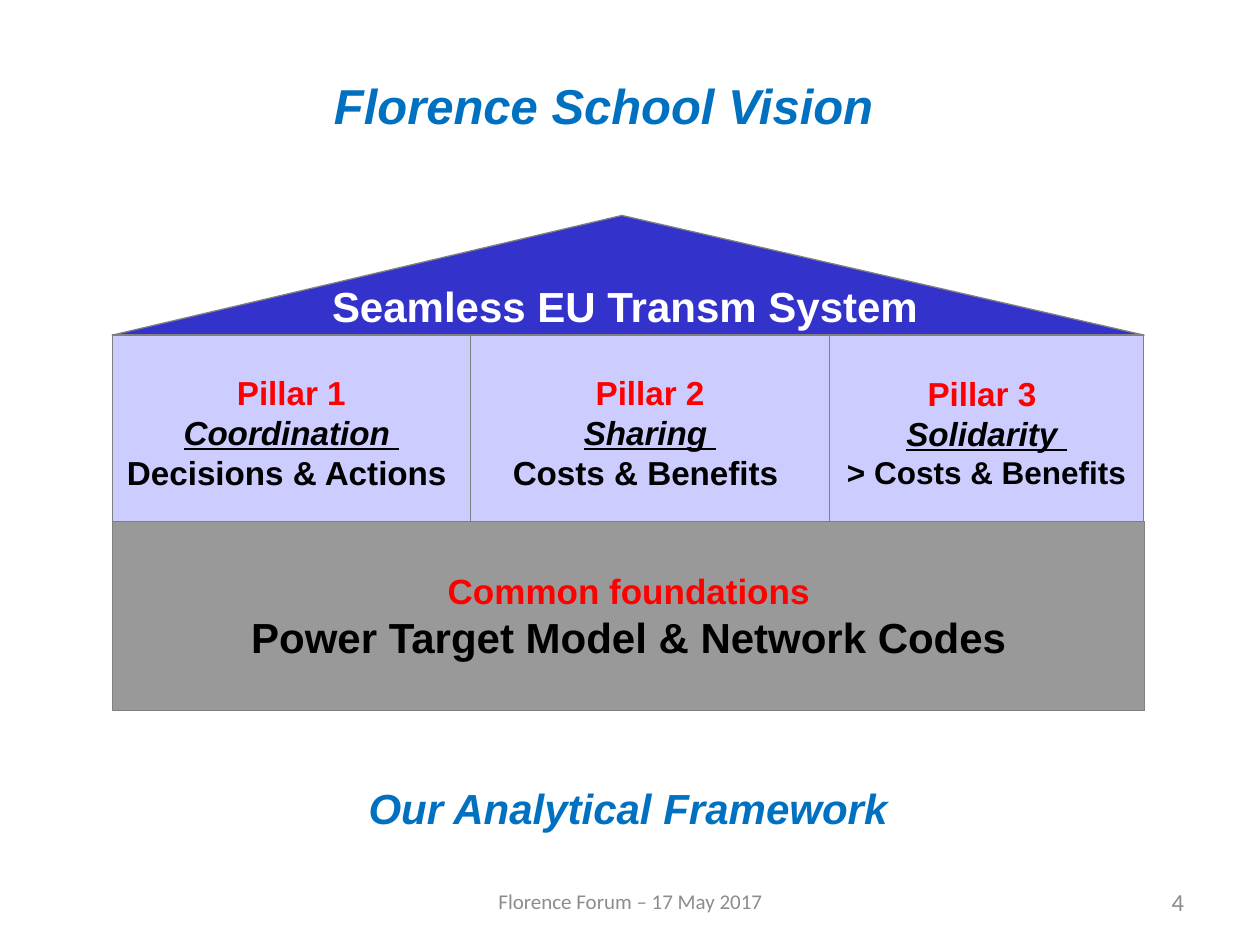
from pptx import Presentation
from pptx.dml.color import RGBColor
from pptx.enum.shapes import MSO_SHAPE as Shape
from pptx.enum.text import MSO_ANCHOR as Anchor, PP_ALIGN as Align
from pptx.util import Pt

COLORS = {
    "roof": "3333CC",
    "pillar": "CCCCFF",
    "foundation": "999999",
    "outline": "808080",
    "heading": "0070C0",
    "label": "FF0000",
    "body": "000000",
    "light": "FFFFFF",
    "footer": "8C8C8C",
}
HOUSE_LEFT, HOUSE_WIDTH = 64.1, 589.7
PILLAR_TOP, PILLAR_HEIGHT = 191.5, 110.9
PILLARS = [
    (204.8, "Pillar 1", "Coordination ", "Decisions & Actions ", 19),
    (205.2, "Pillar 2", "Sharing ", "Costs & Benefits ", 19),
    (179.3, "Pillar 3 ", "Solidarity ", "> Costs & Benefits", 18),
]


def color(name):
    return RGBColor.from_string(COLORS[name])


def line(text, size, color_name, bold=True, italic=False, underline=False, font="Arial"):
    return text, size, color_name, bold, italic, underline, font


def write_lines(shape, lines, align=Align.CENTER, margins=(6.5, 3.6), anchor=Anchor.MIDDLE, wrap=True):
    frame = shape.text_frame
    frame.text = "\n".join(text for text, *_ in lines)
    frame.word_wrap = wrap
    frame.vertical_anchor = anchor
    frame.margin_left = frame.margin_right = Pt(margins[0])
    frame.margin_top = frame.margin_bottom = Pt(margins[1])
    for paragraph, (_, size, color_name, bold, italic, underline, name) in zip(frame.paragraphs, lines):
        paragraph.alignment = align
        for run in paragraph.runs:
            font = run.font
            font.name, font.size = name, Pt(size)
            font.bold, font.italic, font.underline = bold, italic, underline
            font.color.rgb = color(color_name)


def add_block(slide, kind, box, fill, lines, wrap=True):
    shape = slide.shapes.add_shape(kind, *map(Pt, box))
    shape.shadow.inherit = False
    shape.fill.solid()
    shape.fill.fore_color.rgb = color(fill)
    shape.line.color.rgb = color("outline")
    shape.line.width = Pt(0.75)
    write_lines(shape, lines, wrap=wrap)
    return shape


def add_label(slide, box, text_line, **layout):
    label = slide.shapes.add_textbox(*map(Pt, box))
    write_lines(label, [text_line], **layout)
    return label


def add_pillars(slide):
    left = HOUSE_LEFT
    for width, name, theme, detail, detail_size in PILLARS:
        add_block(slide, Shape.RECTANGLE, (left, PILLAR_TOP, width, PILLAR_HEIGHT), "pillar", [
            line(name, 19, "label"),
            line(theme, 19, "body", italic=True, underline=True),
            line(detail, detail_size, "body"),
        ])
        left += width


def main():
    presentation = Presentation()
    presentation.slide_width, presentation.slide_height = Pt(720), Pt(540)
    slide = presentation.slides.add_slide(presentation.slide_layouts[6])

    roof = add_block(slide, Shape.ISOSCELES_TRIANGLE, (HOUSE_LEFT, 123.1, HOUSE_WIDTH, 68.4), "roof",
                     [line("Seamless EU Transm System", 24, "light")], wrap=False)
    roof.adjustments[0] = 0.494
    add_pillars(slide)
    add_block(slide, Shape.RECTANGLE, (64.5, 298.1, HOUSE_WIDTH, 108), "foundation", [
        line("Common foundations", 20, "label"),
        line("Power Target Model & Network Codes", 24, "body"),
    ])

    framework = add_label(slide, (50.4, 425.5, 617, 77.8),
                          line("Our Analytical Framework", 24, "heading", italic=True), margins=(0, 0))
    framework.text_frame.paragraphs[0].line_spacing = 0.81
    add_label(slide, (662.4, 501.1, 45.4, 28.8),
              line("4", 14, "footer", bold=False, font="Calibri"), align=Align.LEFT, margins=(7.2, 3.6))
    add_label(slide, (246.2, 500.4, 228.2, 28.8),
              line("Florence Forum – 17 May 2017", 12, "footer", bold=False, font="Calibri"), margins=(7.2, 3.6))
    add_label(slide, (64.8, 39.6, 560.2, 41),
              line("Florence School Vision", 28, "heading", italic=True), margins=(7.2, 3.6), anchor=Anchor.TOP)

    presentation.save("out.pptx")


if __name__ == "__main__":
    main()
